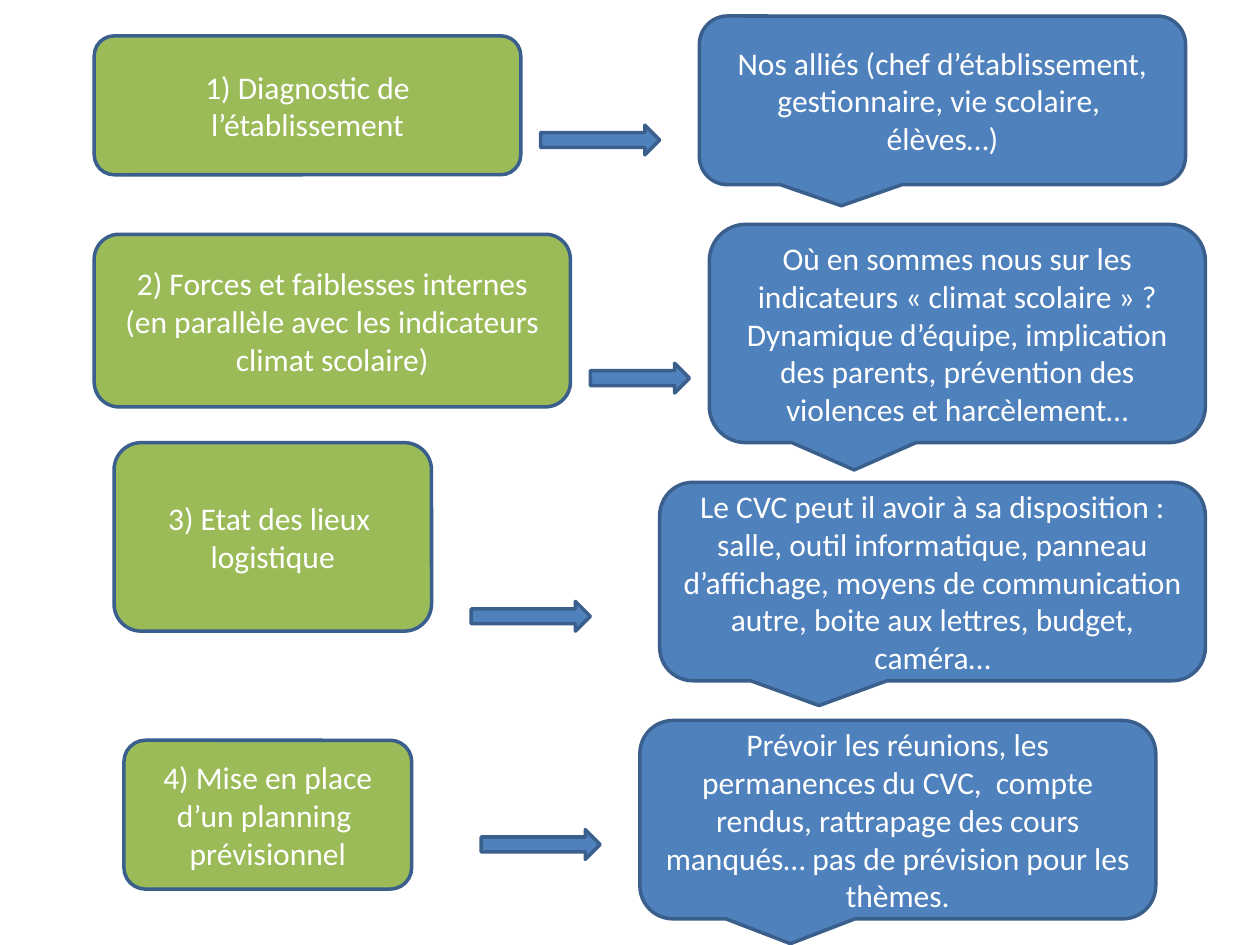
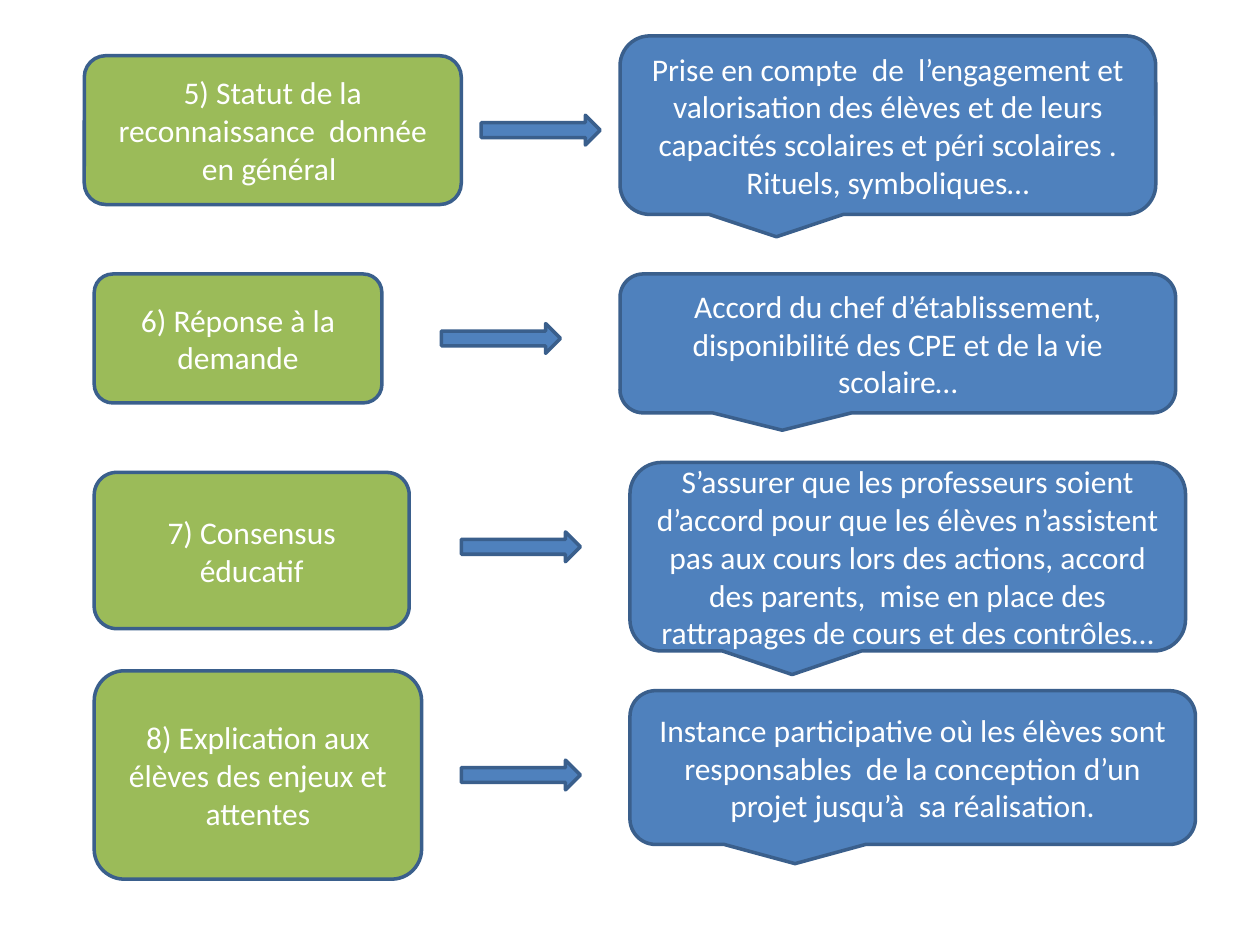
from dataclasses import dataclass

from pptx import Presentation
from pptx import util as u
from pptx.dml.color import RGBColor
from pptx.enum import shapes, text


@dataclass(frozen=True)
class Theme:
    step: RGBColor = RGBColor(0x9B, 0xBB, 0x59)
    answer: RGBColor = RGBColor(0x4F, 0x81, 0xBD)
    outline: RGBColor = RGBColor(0x3A, 0x5F, 0x8C)
    lettering: RGBColor = RGBColor(0xFF, 0xFF, 0xFF)
    font: str = "Calibri"
    size: u.Pt = u.Pt(18)
    line: u.Pt = u.Pt(2)


theme = Theme()
presentation = Presentation()
presentation.slide_width = u.Inches(10)
presentation.slide_height = u.Inches(7.5)

COLUMNS = 127
unit = presentation.slide_width / COLUMNS
LEFT_OFFSET, TOP_OFFSET = 0.5, 0.62
ARROW_HEIGHT = 3
STEP_CORNER = [0.144]
CALLOUT_TAIL = [-0.208, 0.625, 0.167]
ARROW_HEAD = [0.5, 0.5]


def add_block(slide, preset, cell, fill, adjustments):
    column, row, width, height = cell
    shape = slide.shapes.add_shape(
        preset,
        round((column + LEFT_OFFSET) * unit),
        round((row + TOP_OFFSET) * unit),
        round(width * unit),
        round(height * unit),
    )
    for index, value in enumerate(adjustments):
        shape.adjustments[index] = value
    shape.shadow.inherit = False
    shape.fill.solid()
    shape.fill.fore_color.rgb = fill
    shape.line.color.rgb = theme.outline
    shape.line.width = theme.line
    return shape


def write_text(shape, content, size=theme.size, color=theme.lettering, align=text.PP_ALIGN.CENTER):
    frame = shape.text_frame
    frame.word_wrap = True
    frame.vertical_anchor = text.MSO_ANCHOR.MIDDLE
    frame.text = content
    for paragraph in frame.paragraphs:
        paragraph.alignment = align
        for run in paragraph.runs:
            run.font.name = theme.font
            run.font.size = size
            run.font.color.rgb = color


# Each row: step cell, step text, arrow (column, row, width), answer cell, answer text
slides = [
    [
        ((9, 3, 43, 14), "1) Diagnostic de l’établissement", (54, 12, 12),
         (70, 1, 49, 17),
         "Nos alliés (chef d’établissement, gestionnaire, vie scolaire,  élèves…)"),
        ((9, 23, 48, 17.4),
         "2) Forces et faiblesses internes (en parallèle avec les indicateurs climat scolaire)",
         (59, 36, 10), (71, 22, 50, 22),
         "Où en sommes nous sur les indicateurs « climat scolaire » ?\n"
         "Dynamique d’équipe, implication des parents, prévention des violences et harcèlement…"),
        ((11, 44, 32, 19), "3) Etat des lieux  logistique", (47, 60, 12),
         (66, 48, 55, 20),
         "Le CVC peut il avoir à sa disposition : salle, outil informatique, panneau d’affichage, "
         "moyens de communication autre, boite aux lettres, budget, caméra…"),
        ((12, 74, 29, 15), "4) Mise en place d’un planning  prévisionnel", (48, 83, 12),
         (64, 72, 52, 20),
         "Prévoir les réunions, les permanences du CVC,  compte rendus, rattrapage des cours "
         "manqués… pas de prévision pour les thèmes."),
    ],
    [
        ((8, 5, 38, 15), "5) Statut de la reconnaissance  donnée en général ", (48, 11, 12),
         (62, 3, 54, 18),
         "Prise en compte  de  l’engagement et valorisation des élèves et de leurs capacités "
         "scolaires et péri scolaires . Rituels, symboliques…"),
        ((9, 27, 29, 13), "6) Réponse à la demande", (44, 32, 12),
         (62, 27, 56, 14),
         "Accord du chef d’établissement, disponibilité des CPE et de la vie scolaire…"),
        ((9, 47, 31.75, 15.75), "7) Consensus éducatif", (46, 53, 12),
         (63, 46, 56, 19),
         "S’assurer que les professeurs soient d’accord pour que les élèves n’assistent pas aux "
         "cours lors des actions, accord des parents,  mise en place des rattrapages de cours "
         "et des contrôles…"),
        ((9, 67, 33, 21), "8) Explication aux élèves des enjeux et attentes", (46, 76, 12),
         (63, 69, 57, 15.5),
         "Instance participative où les élèves sont responsables  de la conception d’un projet "
         "jusqu’à  sa réalisation."),
    ],
]

for rows in slides:
    slide = presentation.slides.add_slide(presentation.slide_layouts[6])
    for step_cell, step_text, arrow, answer_cell, answer_text in rows:
        step = add_block(slide, shapes.MSO_SHAPE.ROUNDED_RECTANGLE, step_cell,
                         theme.step, STEP_CORNER)
        write_text(step, step_text)
        answer = add_block(slide, shapes.MSO_SHAPE.ROUNDED_RECTANGULAR_CALLOUT, answer_cell,
                           theme.answer, CALLOUT_TAIL)
        write_text(answer, answer_text)
        add_block(slide, shapes.MSO_SHAPE.RIGHT_ARROW, (*arrow, ARROW_HEIGHT),
                  theme.answer, ARROW_HEAD)

presentation.save("out.pptx")
